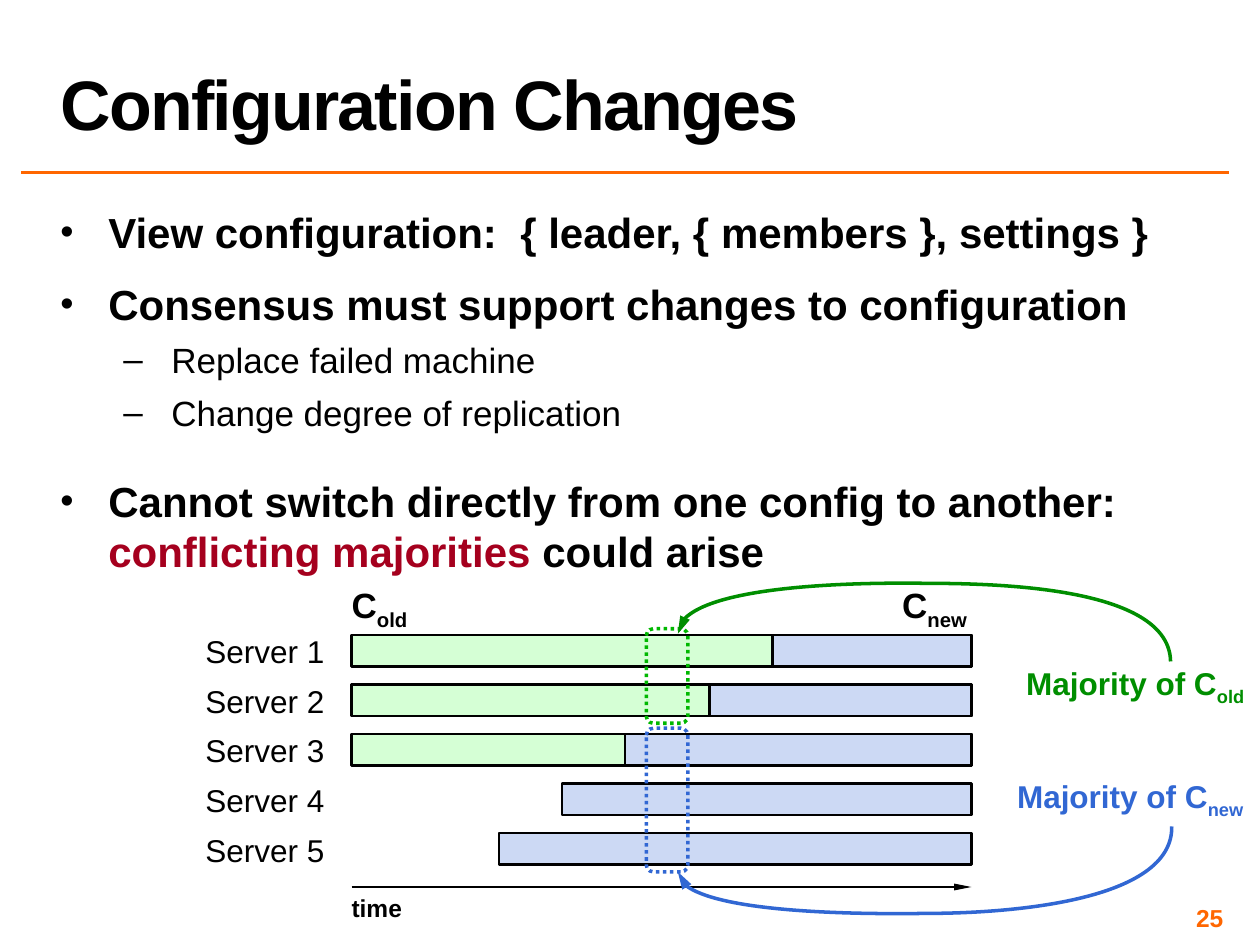
from pptx import Presentation
from pptx.dml.color import RGBColor
from pptx.enum.dml import MSO_LINE
from pptx.enum.shapes import MSO_CONNECTOR, MSO_SHAPE
from pptx.enum.text import MSO_ANCHOR, MSO_AUTO_SIZE, PP_ALIGN
from pptx.oxml.ns import qn
from pptx.util import Inches, Pt
from lxml.etree import SubElement

BLACK, ORANGE, RED = "000000", "FF6600", "A5001E"
OLD_FILL, NEW_FILL = "D5FFD5", "CCD9F4"
OLD_DOTS, OLD_TEXT, NEW_TEXT = "00B800", "008E00", "3167D3"


def rgb(hex_color):
    return RGBColor.from_string(hex_color)


def box(*lengths):
    return [Inches(length) for length in lengths]


class SlideBuilder:
    font = "Arial"

    def __init__(self, slide):
        self.slide = slide
        self.shapes = slide.shapes

    def style(self, paragraph, size, color=BLACK, bold=False):
        font = paragraph.font
        font.name, font.size, font.bold = self.font, Pt(size), bold
        font.color.rgb = rgb(color)

    def place(self, holder, *bounds):
        holder.left, holder.top, holder.width, holder.height = box(*bounds)
        holder.text_frame.auto_size = MSO_AUTO_SIZE.NONE
        return holder.text_frame

    def title(self, text, *bounds):
        frame = self.place(self.shapes.title, *bounds)
        frame.vertical_anchor = MSO_ANCHOR.BOTTOM
        heading = frame.paragraphs[0]
        heading.alignment, heading.line_spacing = PP_ALIGN.LEFT, 0.8
        run = heading.add_run()
        run.text = text
        run.font._element.set("spc", "-100")
        self.style(heading, 40, bold=True)

    def bullets(self, items, *bounds):
        """Each item: level, space before, list of (text, colour)."""
        frame = self.place(self.slide.placeholders[1], *bounds)
        frame.vertical_anchor = MSO_ANCHOR.TOP
        for index, (level, space, parts) in enumerate(items):
            item = frame.add_paragraph() if index else frame.paragraphs[0]
            item.level, item.space_before = level, Pt(space)
            for text, color in parts:
                run = item.add_run()
                run.text = text
                if color != BLACK:
                    run.font.color.rgb = rgb(color)
            props = item._p.get_or_add_pPr()
            props.set("marL", str(Inches(0.88 if level else 0.38)))
            props.set("indent", str(Inches(-0.38)))
            if not level:
                SubElement(props, qn("a:buSzPct"), val="90000")
            SubElement(props, qn("a:buChar"), char="–" if level else "•")
            self.style(item, 20 if level else 24, bold=not level)

    def label(self, text, bounds, size, color=BLACK, bold=True, sub="",
              align=PP_ALIGN.LEFT, anchor=MSO_ANCHOR.TOP, inset=0, wrap=False):
        frame = self.shapes.add_textbox(*box(*bounds)).text_frame
        frame.margin_left = frame.margin_right = Inches(inset)
        frame.margin_top = frame.margin_bottom = Inches(inset)
        frame.word_wrap, frame.vertical_anchor = wrap, anchor
        if not wrap:
            frame.auto_size = MSO_AUTO_SIZE.SHAPE_TO_FIT_TEXT
        line = frame.paragraphs[0]
        line.alignment = align
        line.add_run().text = text
        if sub:
            subscript = line.add_run()
            subscript.text = sub
            subscript.font._element.set("baseline", "-25000")
        self.style(line, size, color, bold)

    def bar(self, left, top, right, height, fill):
        bar = self.shapes.add_shape(
            MSO_SHAPE.RECTANGLE, *box(left, top, right - left, height))
        bar.shadow.inherit = False
        bar.fill.solid()
        bar.fill.fore_color.rgb = rgb(fill)
        self.outline(bar, BLACK, 1.5)

    def dotted_frame(self, bounds, color):
        frame = self.shapes.add_shape(MSO_SHAPE.ROUNDED_RECTANGLE, *box(*bounds))
        frame.shadow.inherit = False
        frame.fill.background()
        self.outline(frame, color, 2)
        frame.line.dash_style = MSO_LINE.ROUND_DOT

    def outline(self, shape, color, width):
        shape.line.color.rgb = rgb(color)
        shape.line.width = Pt(width)

    def arrowhead(self, shape, width):
        SubElement(shape.line._get_or_add_ln(), qn("a:tailEnd"),
                   type="triangle", w=width, len="lg")

    def straight(self, start, end, color, width, arrow=False):
        line = self.shapes.add_connector(
            MSO_CONNECTOR.STRAIGHT, *box(*start, *end))
        self.outline(line, color, width)
        if arrow:
            self.arrowhead(line, "sm")
        SubElement(line._element.spPr, qn("a:effectLst"))

    def curved_arrow(self, points, color):
        """Start point, then three Bezier points for each segment."""
        start, *controls = [box(*point) for point in points]
        builder = self.shapes.build_freeform(*start)
        builder.add_line_segments(controls, close=False)
        curve = builder.convert_to_shape()
        outline_path = next(curve._element.iter(qn("a:path")))
        steps = outline_path.findall(qn("a:lnTo"))
        for first in range(0, len(steps), 3):
            bezier = SubElement(outline_path, qn("a:cubicBezTo"))
            for step in steps[first:first + 3]:
                bezier.append(step[0])
                outline_path.remove(step)
        curve.shadow.inherit = False
        curve.fill.background()
        self.outline(curve, color, 2)
        self.arrowhead(curve, "med")


def main():
    deck = Presentation()
    deck.slide_width, deck.slide_height = box(10, 7.5)
    page = SlideBuilder(deck.slides.add_slide(deck.slide_layouts[1]))

    # Heading, rule and page number
    page.straight((0.17, 1.37), (9.75, 1.37), ORANGE, 2)
    page.label("25", (7.42, 7.17, 2.33, 0.23), 14, ORANGE, inset=0.04,
               align=PP_ALIGN.RIGHT, anchor=MSO_ANCHOR.MIDDLE, wrap=True)
    page.title("Configuration Changes", 0.38, 0.02, 9.37, 1.17)

    # Main points
    page.bullets([
        (0, 12, [("View configuration:  { leader, { members }, settings }", BLACK)]),
        (0, 12, [("Consensus must support changes to configuration", BLACK)]),
        (1, 6, [("Replace failed machine", BLACK)]),
        (1, 6, [("Change degree of replication", BLACK)]),
        (0, 24, [("Cannot switch directly from one config to another: ", BLACK),
                 ("conflicting majorities ", RED), ("could arise", BLACK)]),
    ], 0.38, 1.59, 9.37, 3.28)

    # Server timelines: (has old configuration, start of new configuration)
    start, end, first_top, pitch = 2.79, 7.71, 5.04, 0.393
    servers = [(True, 6.13), (True, 5.63), (True, 4.96), (False, 4.46), (False, 3.96)]
    for index, (has_old, switch) in enumerate(servers):
        top = first_top + index * pitch
        page.label(f"Server {index + 1}", (1.63, top - 0.02, 0.95, 0.3), 18, bold=False)
        if has_old:
            page.bar(start, top, end, 0.25, OLD_FILL)
        page.bar(switch, top, end, 0.25, NEW_FILL)
    page.label("C", (start, 4.63, 0.48, 0.34), 20, sub="old")
    page.label("C", (7.16, 4.63, 0.57, 0.34), 20, sub="new")

    # Time axis
    page.straight((start, 7.04), (end, 7.04), BLACK, 1.5, arrow=True)
    page.label("time", (start, 7.09, 0.5, 0.24), 14, wrap=True)

    # Conflicting majorities
    page.dotted_frame((5.13, 5.78, 0.33, 1.14), NEW_TEXT)
    page.dotted_frame((5.13, 4.99, 0.33, 0.75), OLD_DOTS)
    page.label("Majority of C", (8.12, 5.27, 1.78, 0.3), 18, OLD_TEXT,
               sub="old", align=PP_ALIGN.CENTER)
    page.label("Majority of C", (8.04, 6.17, 1.86, 0.3), 18, NEW_TEXT,
               sub="new", align=PP_ALIGN.CENTER)
    page.curved_arrow([(9.29, 5.25), (9.28, 4.68), (8.02, 4.63), (7.35, 4.63),
                       (6.68, 4.62), (5.37, 4.67), (5.38, 5.03)], OLD_TEXT)
    page.curved_arrow([(9.3, 6.56), (9.31, 7.15), (8.03, 7.25), (7.35, 7.25),
                       (6.66, 7.26), (5.37, 7.22), (5.38, 6.92)], NEW_TEXT)

    deck.save("out.pptx")


if __name__ == "__main__":
    main()
